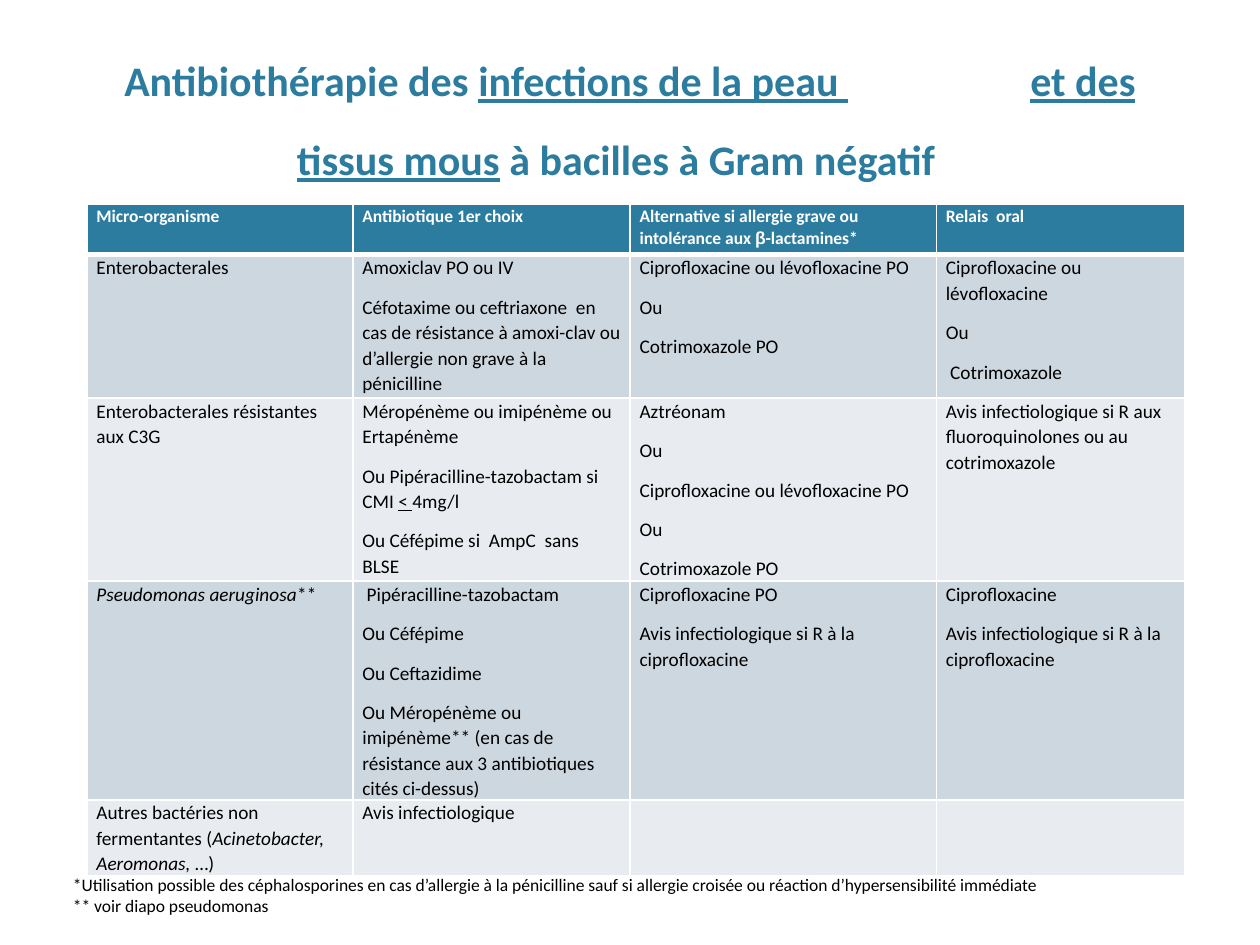
from dataclasses import dataclass

from lxml import etree
from pptx import Presentation
from pptx import util as u
from pptx.dml.color import RGBColor
from pptx.enum import text
from pptx.oxml.ns import qn


@dataclass(frozen=True)
class Theme:
    font: str = "Calibri"
    greek_font: str = "Arial"
    accent: str = "2C7C9F"
    ink: str = "000000"
    white: str = "FFFFFF"
    bands: tuple = ("CDD7DF", "E8ECF0")
    title: float = 24
    title_end: float = 46
    body: float = 11
    small: float = 10


class Deck:
    def __init__(self, theme):
        self.t = theme
        self.prs = Presentation()
        self.prs.slide_width, self.prs.slide_height = u.Pt(720), u.Pt(540)
        self.s = self.prs.slides.add_slide(self.prs.slide_layouts[6])

    def paragraph(self, p, content, size, color, bold=False):
        runs = [(content, {})] if isinstance(content, str) else content
        if runs[0][0].startswith(" "):
            p._p.get_or_add_pPr().set("marL", str(u.Pt(2.5)))
            runs = [(runs[0][0].lstrip(), runs[0][1]), *runs[1:]]
        f = p.font
        f.name, f.size, f.bold = self.t.font, u.Pt(size), bold
        f.color.rgb = RGBColor.from_string(color)
        for words, style in runs:
            r = p.add_run()
            r.text = words
            for name, value in style.items():
                if name == "spacing":
                    r._r.get_or_add_rPr().set("spc", str(value * 100))
                else:
                    setattr(r.font, name, value)

    def paragraphs(self, tf, contents, *style):
        for i, content in enumerate(contents):
            p = tf.paragraphs[0] if i == 0 else tf.add_paragraph()
            self.paragraph(p, content, *style)

    def box(self, x, y, w, h, contents, *style, anchor=text.MSO_ANCHOR.TOP):
        tf = self.s.shapes.add_textbox(*map(u.Pt, (x, y, w, h))).text_frame
        tf.word_wrap = True
        tf.vertical_anchor = anchor
        self.paragraphs(tf, contents, *style)
        return tf

    def title(self, x, y, w, h, runs):
        tf = self.box(x, y, w, h, [runs], self.t.title, self.t.accent, True,
                      anchor=text.MSO_ANCHOR.BOTTOM)
        p = tf.paragraphs[0]
        p.alignment = text.PP_ALIGN.CENTER
        p.line_spacing = 0.9

    def borders(self, cell, header):
        tcPr = cell._tc.get_or_add_tcPr()
        for side in ("lnL", "lnR", "lnT", "lnB"):
            width = 3 if header and side == "lnB" else 1
            ln = etree.SubElement(tcPr, qn(f"a:{side}"), w=str(u.Pt(width)))
            fill = etree.SubElement(ln, qn("a:solidFill"))
            etree.SubElement(fill, qn("a:srgbClr"), val=self.t.white)

    def cell(self, cell, contents, row):
        header = row == 0
        self.borders(cell, header)
        cell.fill.solid()
        color = self.t.accent if header else self.t.bands[(row - 1) % 2]
        cell.fill.fore_color.rgb = RGBColor.from_string(color)
        cell.margin_left = cell.margin_right = u.Pt(5.4)
        cell.margin_top = cell.margin_bottom = 0
        style = (self.t.small, self.t.white, True) if header else (self.t.body, self.t.ink)
        self.paragraphs(cell.text_frame, contents, *style)
        for p in cell.text_frame.paragraphs:
            p.line_spacing = 1.07
            p.space_after = u.Pt(8)

    def table(self, x, y, widths, heights, rows):
        table = self.s.shapes.add_table(
            len(rows), len(widths), u.Pt(x), u.Pt(y),
            u.Pt(sum(widths)), u.Pt(sum(heights))).table
        for column, width in zip(table.columns, widths):
            column.width = u.Pt(width)
        for i, (row, height) in enumerate(zip(rows, heights)):
            table.rows[i].height = u.Pt(height)
            for j, contents in enumerate(row):
                self.cell(table.cell(i, j), contents, i)


THEME = Theme()
UNDER = {"underline": True}
ITALIC = {"italic": True}

TITLE = [
    ("Antibiothérapie des ", {}),
    ("infections de la peau", UNDER),
    (" ", {"underline": True, "spacing": 104}),
    ("et des tissus mous", UNDER),
    ("\N{NO-BREAK SPACE}", {"bold": False}),
    ("à bacilles à Gram négatif ", {}),
    ("\N{NO-BREAK SPACE}", {"bold": False, "size": u.Pt(THEME.title_end)}),
]

QUINOLONES = "Ciprofloxacine ou lévofloxacine"
ADVICE = "Avis infectiologique"
CIPRO_ADVICE = f"{ADVICE} si R à la ciprofloxacine"

ROWS = [
    [["Micro-organisme"],
     ["Antibiotique 1er choix"],
     [[("Alternative si allergie grave ou intolérance aux ", {}),
       ("β", {"name": THEME.greek_font}),
       ("-lactamines*", {})]],
     ["Relais  oral"]],
    [["Enterobacterales"],
     ["Amoxiclav PO ou IV",
      "Céfotaxime ou ceftriaxone  en cas de résistance à amoxi-clav "
      "ou d’allergie non grave à la pénicilline"],
     [f"{QUINOLONES} PO", "Ou", "Cotrimoxazole PO"],
     [QUINOLONES, "Ou", " Cotrimoxazole"]],
    [["Enterobacterales résistantes aux C3G"],
     ["Méropénème ou imipénème ou Ertapénème",
      [("Ou Pipéracilline-tazobactam si CMI ", {}), ("< ", UNDER), ("4mg/l", {})],
      "Ou Céfépime si  AmpC  sans BLSE"],
     ["Aztréonam", "Ou", f"{QUINOLONES} PO", "Ou", "Cotrimoxazole PO"],
     [f"{ADVICE} si R aux fluoroquinolones ou au cotrimoxazole"]],
    [[[("Pseudomonas aeruginosa", ITALIC), ("**", {})]],
     [" Pipéracilline-tazobactam", "Ou Céfépime", "Ou Ceftazidime",
      "Ou Méropénème ou imipénème** (en cas de résistance "
      "aux 3 antibiotiques cités ci-dessus)"],
     ["Ciprofloxacine PO", CIPRO_ADVICE],
     ["Ciprofloxacine", CIPRO_ADVICE]],
    [[[("Autres bactéries non fermentantes (", {}),
       ("Acinetobacter, Aeromonas, ", ITALIC),
       ("…)", {})]],
     [ADVICE], [], []],
]

NOTES = [
    "*Utilisation possible des céphalosporines en cas d’allergie à la pénicilline "
    "sauf si allergie croisée ou réaction d’hypersensibilité immédiate",
    "** voir diapo pseudomonas",
]


def main():
    deck = Deck(THEME)
    deck.title(43.2, 8.6, 633.6, 105.2, TITLE)
    deck.table(49.7, 116.6, (152, 158.4, 175, 141.8), (29, 82, 104.5, 125, 43.5), ROWS)
    deck.box(34.6, 496, 633.6, 31.7, NOTES, THEME.small, THEME.ink)
    deck.prs.save("out.pptx")


if __name__ == "__main__":
    main()
